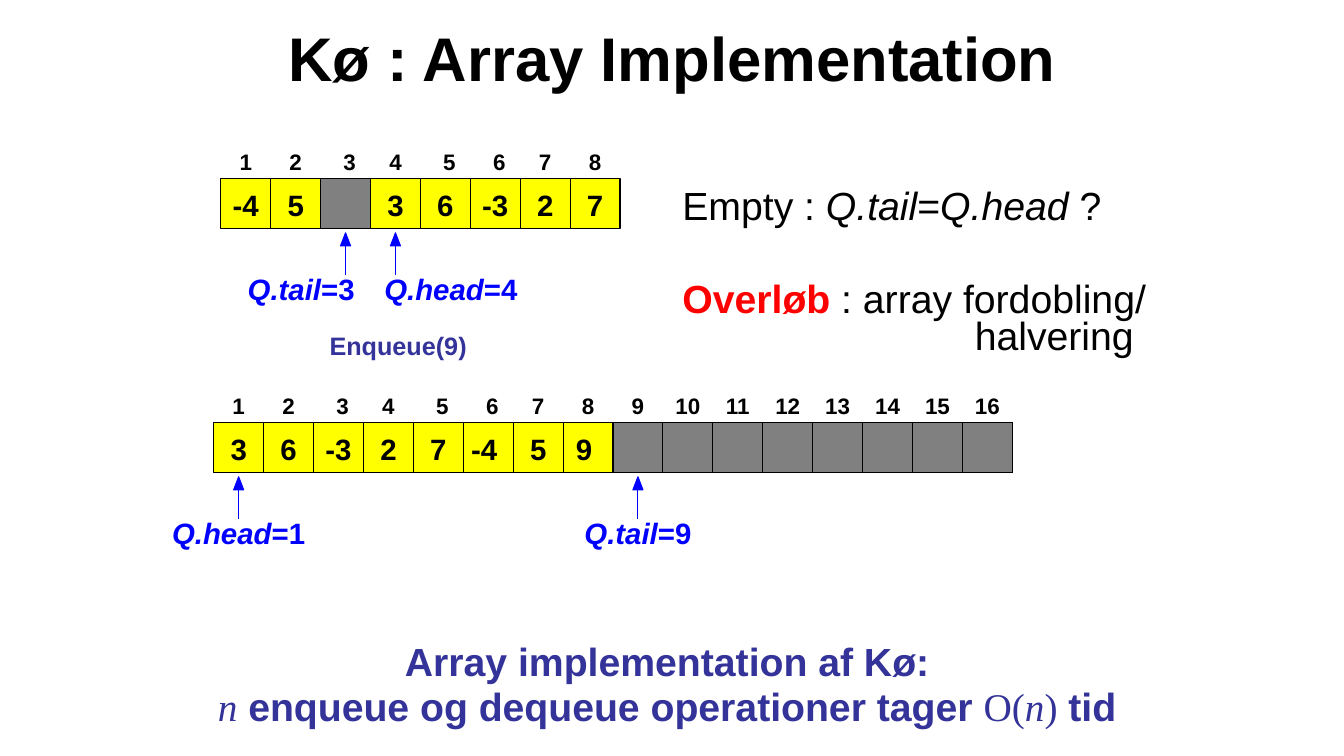
from dataclasses import dataclass

from lxml import etree
from pptx import Presentation
from pptx import util as u
from pptx.dml.color import RGBColor
from pptx.enum import shapes, text
from pptx.oxml import ns


@dataclass(frozen=True)
class Theme:
    sans: str = "Arial"
    serif: str = "Times New Roman"
    black: str = "000000"
    blue: str = "0000FF"
    indigo: str = "333399"
    red: str = "FF0000"
    yellow: str = "FFFF00"
    grey: str = "808080"
    title: int = 44
    body: int = 28
    value: int = 21
    operation: int = 18
    index: int = 16


THEME = Theme()
CELL = 0.495
# Small shifts of index numbers away from the cell centre
INDEX_SHIFT = {2: 0.04, 4: 0.04, 5: 0.04}


def color(code):
    return RGBColor.from_string(code)


def write(para, runs, size, code, bold=False, align=None):
    """Fill a paragraph with (text, font overrides) runs."""
    para.alignment = align
    font = para.font
    font.name, font.size, font.bold = THEME.sans, u.Pt(size), bold
    font.color.rgb = color(code)
    for words, style in runs:
        span = para.add_run()
        span.text = words
        for key, value in style.items():
            if key == "color":
                span.font.color.rgb = color(value)
            else:
                setattr(span.font, key, value)


def add_box(parent, left, top, width, height):
    box = parent.add_textbox(*map(u.Inches, (left, top, width, height)))
    box.text_frame.word_wrap = True
    return box.text_frame


def add_label(parent, center, top, width, height, runs, size, code):
    """Centred bold label without margins."""
    frame = add_box(parent, center - width / 2, top, width, height)
    frame.word_wrap = False
    frame.margin_left = frame.margin_right = 0
    frame.margin_top = frame.margin_bottom = 0
    write(frame.paragraphs[0], runs, size, code, True, text.PP_ALIGN.CENTER)


def paint(shape, fill, line):
    shape.shadow.inherit = False
    shape.fill.solid()
    shape.fill.fore_color.rgb = color(fill)
    shape.line.color.rgb = color(line)
    shape.line.width = u.Pt(0)


def add_band(parent, left, top, cells, fill):
    band = parent.add_shape(shapes.MSO_SHAPE.RECTANGLE, u.Inches(left),
                            u.Inches(top), u.Inches(cells * CELL), u.Inches(0.5))
    paint(band, fill, THEME.black)


def add_line(parent, x, start, end, code):
    """Vertical hairline, free of the theme's thicker line style."""
    line = parent.add_connector(shapes.MSO_CONNECTOR.STRAIGHT, u.Inches(x),
                                u.Inches(start), u.Inches(x), u.Inches(end))
    line.line.color.rgb = color(code)
    line.line.width = u.Pt(0)
    etree.SubElement(line._element.spPr, ns.qn("a:effectLst"))
    line._element.remove(line._element.find(ns.qn("p:style")))


def add_pointer(parent, x, top, name, value, shift):
    """Upward arrow below a cell, with its label."""
    add_line(parent, x, top + 0.95, top + 0.63, THEME.blue)
    tip, base = u.Inches(top + 0.54), u.Inches(top + 0.67)
    outline = parent.build_freeform(u.Inches(x - 0.05), base)
    outline.add_line_segments([(u.Inches(x), tip), (u.Inches(x + 0.05), base)])
    paint(outline.convert_to_shape(), THEME.blue, THEME.blue)
    width = 1.36 if name == "Q.head" else 1.1
    add_label(parent, x + shift, top + 0.92, width, 0.35,
              [(name, {"italic": True}), (f"={value}", {})],
              THEME.value, THEME.blue)


def add_array(page, left, top, values, empty, pointers, value_shift):
    """Array with indices, dividers, values and head and tail pointers."""
    group = page.shapes.add_group_shape().shapes
    centers = [left + (i + 0.5) * CELL for i in range(len(values))]
    add_band(group, left, top, len(values), THEME.yellow)
    first, count = empty
    add_band(group, left + first * CELL, top, count, THEME.grey)
    for i, (center, value) in enumerate(zip(centers, values)):
        if i:
            add_line(group, left + i * CELL, top + 0.5, top, THEME.black)
        index = str(i + 1)
        add_label(group, center + INDEX_SHIFT.get(i, 0), top - 0.3,
                  0.14 * len(index), 0.27, [(index, {})],
                  THEME.index, THEME.black)
        if value is not None:
            add_label(group, center + value_shift.get(i, 0), top + 0.09,
                      0.28 if value < 0 else 0.18, 0.35, [(str(value), {})],
                      THEME.value, THEME.black)
    for name, value, shift in pointers:
        add_pointer(group, centers[value - 1], top, name, value, shift)


def add_title(page, left, top, width, height):
    title = page.shapes.title
    title.left, title.top = u.Inches(left), u.Inches(top)
    title.width, title.height = u.Inches(width), u.Inches(height)
    title.text_frame.vertical_anchor = text.MSO_ANCHOR.MIDDLE
    write(title.text_frame.paragraphs[0], [("Kø : Array Implementation", {})],
          THEME.title, THEME.black, True, text.PP_ALIGN.CENTER)


def add_remarks(page, left, top):
    """Notes on the empty test and on overflow."""
    italic = {"italic": True}
    frame = add_box(page.shapes, left, top, 4.67, 0.75)
    write(frame.paragraphs[0], [("Empty : ", {}), ("Q.tail", italic), ("=", {}),
                                ("Q.head", italic), (" ?", {})],
          THEME.body, THEME.black)
    frame = add_box(page.shapes, left, top + 0.92, 5, 0.75)
    write(frame.paragraphs[0],
          [("Overløb", {"bold": True, "color": THEME.red}),
           (" : array fordobling/", {})], THEME.body, THEME.black)
    para = frame.add_paragraph()
    write(para, [("halvering", {})], THEME.body, THEME.black)
    para.line_spacing, para.space_before = 0.55, u.Pt(6)
    para._p.get_or_add_pPr().set("marL", str(u.Inches(2.9)))


def add_operation(page, left, top):
    frame = add_box(page.shapes, left, top, 2.08, 0.39)
    para = frame.paragraphs[0]
    write(para, [("Enqueue(9)", {})], THEME.operation, THEME.indigo, True)
    para.line_spacing = 0.95


def add_conclusion(page, left, top, width, height):
    frame = add_box(page.shapes, left, top, width, height)
    serif = {"name": THEME.serif, "bold": False}
    variable = {**serif, "italic": True}
    lines = [
        [("Array implementation af Kø: ", {})],
        [("n", variable), (" enqueue og dequeue operationer tager ", {}),
         ("O(", serif), ("n", variable), (")", serif), (" tid ", {})],
    ]
    for i, runs in enumerate(lines):
        para = frame.add_paragraph() if i else frame.paragraphs[0]
        write(para, runs, THEME.body, THEME.indigo, True, text.PP_ALIGN.CENTER)
        para.line_spacing = 0.65
        para.space_before = u.Pt(10 if i else 0)


def main():
    deck = Presentation()
    deck.slide_width, deck.slide_height = u.Inches(13.33), u.Inches(7.5)
    page = deck.slides.add_slide(deck.slide_layouts[5])
    add_title(page, 2.17, 0, 9, 1.12)
    add_remarks(page, 6.67, 1.75)
    add_operation(page, 3.17, 3.25)
    add_conclusion(page, 1.67, 6.42, 10, 0.89)
    # Queue before and after the array doubles
    add_array(page, 2.19, 1.77, [-4, 5, None, 3, 6, -3, 2, 7], (2, 1),
              [("Q.head", 4, 0.55), ("Q.tail", 3, -0.44)], {})
    add_array(page, 2.12, 4.19, [3, 6, -3, 2, 7, -4, 5, 9] + [None] * 8, (8, 8),
              [("Q.head", 1, 0), ("Q.tail", 9, 0)], {5: -0.04, 7: -0.04})
    deck.save("out.pptx")


if __name__ == "__main__":
    main()
